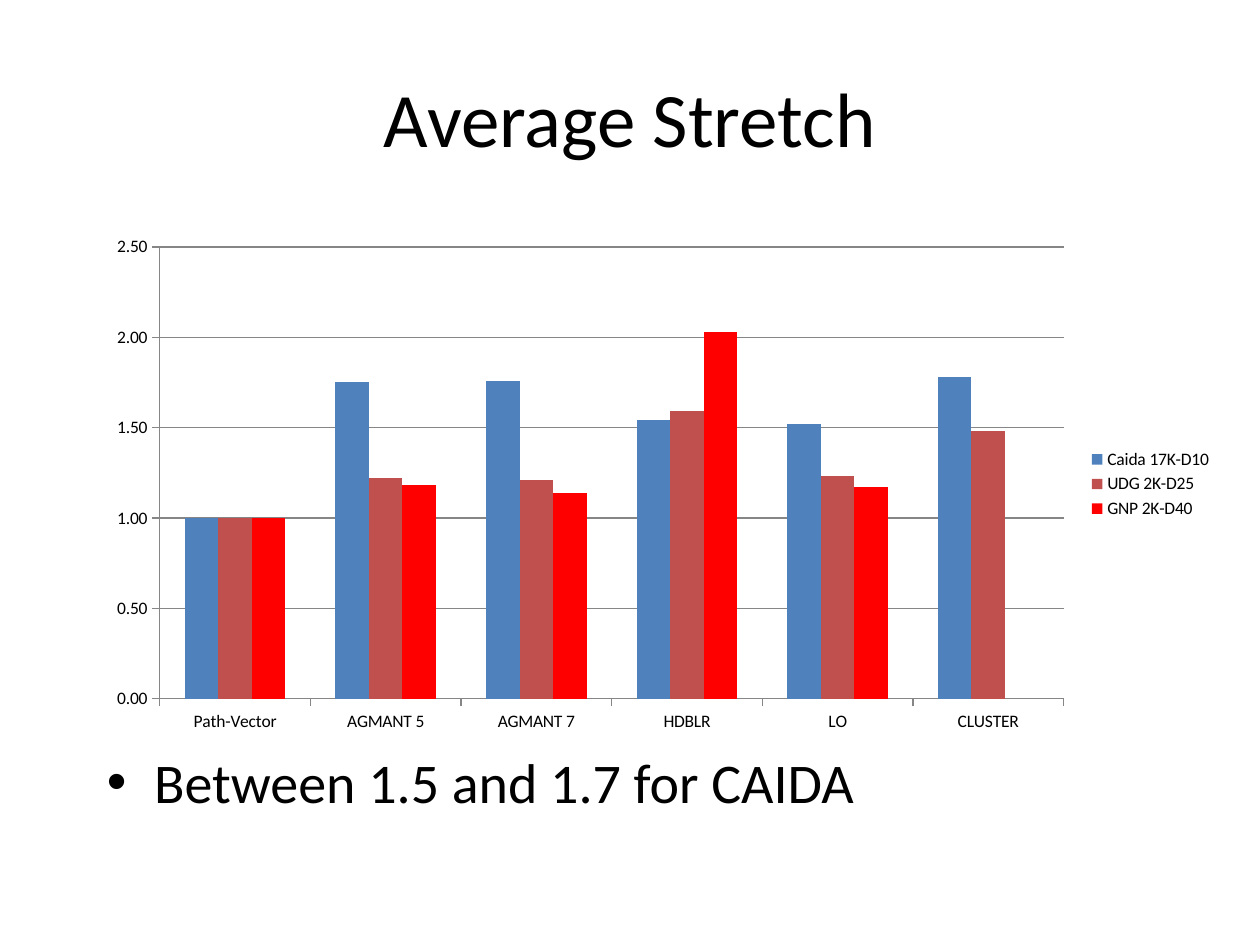
import pptx
import pptx.chart.data
import pptx.dml.color
import pptx.enum.chart
import pptx.enum.text
import pptx.oxml
import pptx.oxml.ns
import pptx.util
from pptx.util import Pt

BLACK = pptx.dml.color.RGBColor(0x00, 0x00, 0x00)
GRAY = pptx.dml.color.RGBColor(0x86, 0x86, 0x86)
BLUE = pptx.dml.color.RGBColor(0x4F, 0x81, 0xBD)
BRICK = pptx.dml.color.RGBColor(0xC0, 0x50, 0x4D)
RED = pptx.dml.color.RGBColor(0xFF, 0x00, 0x00)
FONT = "Calibri"

METHODS = ["Path-Vector", "AGMANT 5", "AGMANT 7", "HDBLR", "LO", "CLUSTER"]
STRETCH = [
    ("Caida 17K-D10", BLUE, [1, 1.75, 1.76, 1.54, 1.52, 1.78]),
    ("UDG 2K-D25", BRICK, [1, 1.22, 1.21, 1.59, 1.23, 1.48]),
    ("GNP 2K-D40", RED, [1, 1.18, 1.14, 2.03, 1.17, None]),
]


def set_font(font, size):
    font.name = FONT
    font.size = Pt(size)
    font.color.rgb = BLACK


def add_bullet(paragraph, indent):
    properties = paragraph._p.get_or_add_pPr()
    properties.set("marL", str(Pt(indent)))
    properties.set("indent", str(-Pt(indent)))
    namespace = pptx.oxml.ns.nsdecls("a")
    for xml in (f'<a:buFont {namespace} typeface="Arial"/>',
                f'<a:buChar {namespace} char="•"/>'):
        properties.append(pptx.oxml.parse_xml(xml))


def add_text(slide, box, text, size, align=pptx.enum.text.PP_ALIGN.LEFT,
             anchor=pptx.enum.text.MSO_ANCHOR.TOP, space_before=0, bullet_indent=0):
    frame = slide.shapes.add_textbox(*map(Pt, box)).text_frame
    frame.word_wrap = True
    frame.vertical_anchor = anchor
    paragraph = frame.paragraphs[0]
    paragraph.alignment = align
    paragraph.space_before = Pt(space_before)
    if bullet_indent:
        add_bullet(paragraph, bullet_indent)
    run = paragraph.add_run()
    run.text = text
    set_font(run.font, size)


def add_stretch_chart(slide, box):
    data = pptx.chart.data.CategoryChartData(number_format="0.00")
    data.categories = METHODS
    for name, _, values in STRETCH:
        data.add_series(name, values)
    chart = slide.shapes.add_chart(
        pptx.enum.chart.XL_CHART_TYPE.COLUMN_CLUSTERED, *map(Pt, box), data).chart
    set_font(chart.font, 10)
    chart.has_title = False

    # Columns
    plot = chart.plots[0]
    plot.gap_width = 150
    plot.vary_by_categories = False
    for series, (_, color, _) in zip(plot.series, STRETCH):
        series.format.fill.solid()
        series.format.fill.fore_color.rgb = color

    # Axes and gridlines
    value_axis = chart.value_axis
    value_axis.minimum_scale = 0
    value_axis.maximum_scale = 2.5
    value_axis.major_unit = 0.5
    value_axis.has_major_gridlines = True
    value_axis.tick_labels.number_format = "0.00"
    value_axis.tick_labels.number_format_is_linked = False
    for axis in (chart.category_axis, value_axis):
        axis.major_tick_mark = pptx.enum.chart.XL_TICK_MARK.OUTSIDE
    for part in (chart.category_axis, value_axis, value_axis.major_gridlines):
        part.format.line.color.rgb = GRAY
        part.format.line.width = Pt(0.75)

    # Legend
    chart.has_legend = True
    chart.legend.position = pptx.enum.chart.XL_LEGEND_POSITION.RIGHT
    chart.legend.include_in_layout = False


def build_chart_slide(slide, box):
    left, top, width, height = box
    # Title
    add_text(slide, (left + 36, top + 21.6, width - 72, 90), "Average Stretch", 44,
             align=pptx.enum.text.PP_ALIGN.CENTER,
             anchor=pptx.enum.text.MSO_ANCHOR.MIDDLE)
    # Chart with its takeaway directly below
    content_left, content_width = left + 54, width - 74
    chart_top, chart_height = top + 129.6, 294
    add_stretch_chart(slide, (content_left, chart_top, content_width, chart_height))
    add_text(slide, (content_left, chart_top + chart_height, content_width, 64.8),
             "Between 1.5 and 1.7 for CAIDA", 32, space_before=6.4, bullet_indent=27)


def main():
    presentation = pptx.Presentation()
    presentation.slide_width = Pt(720)
    presentation.slide_height = Pt(540)
    slide = presentation.slides.add_slide(presentation.slide_layouts[6])
    build_chart_slide(slide, (0, 0, 720, 540))
    presentation.save("out.pptx")


if __name__ == "__main__":
    main()
